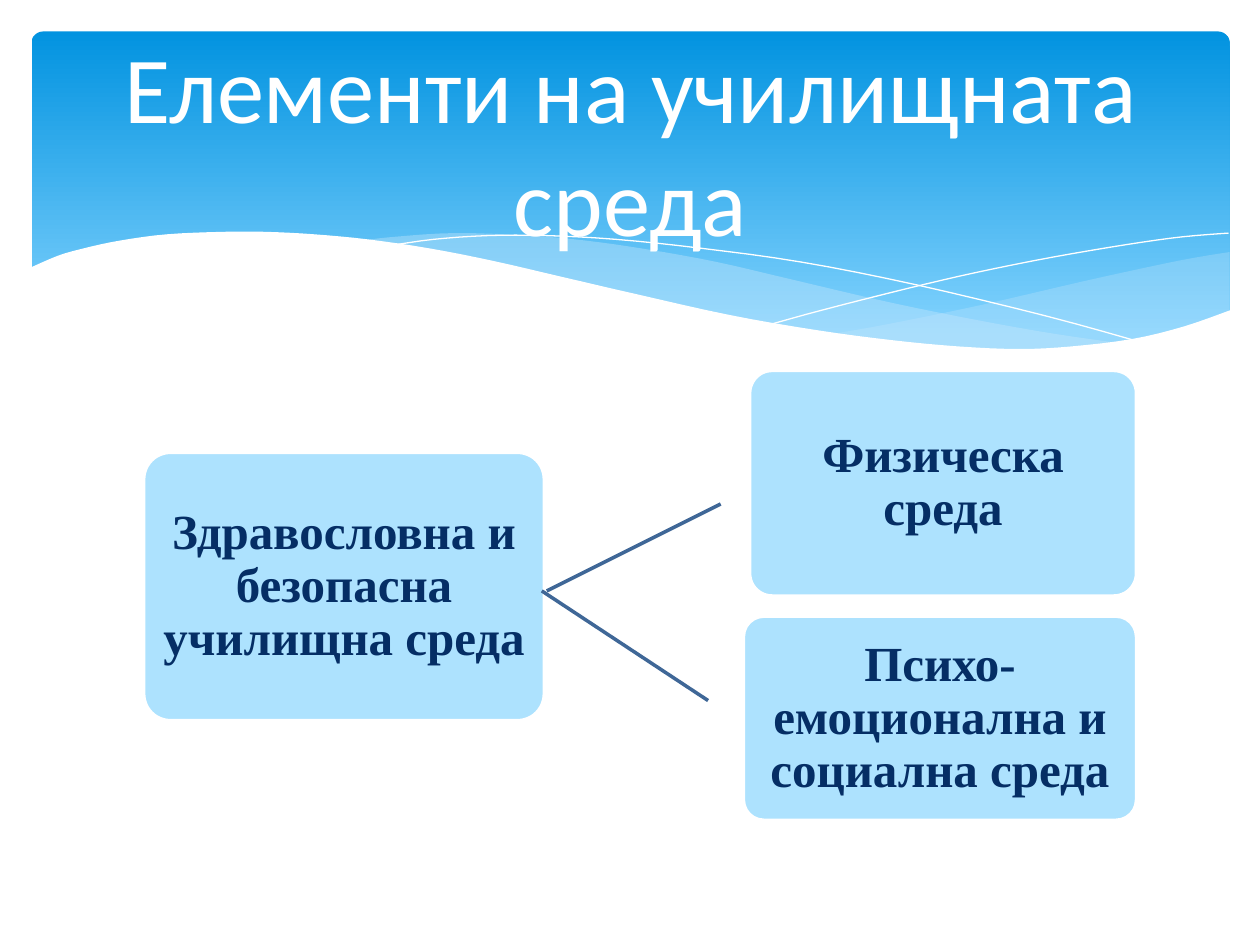
"""Build the slide on the elements of the school environment."""
import pptx
import pptx.dml.color
import pptx.enum.shapes
import pptx.enum.text
import pptx.oxml
import pptx.util
from pptx.util import Inches

RGBColor = pptx.dml.color.RGBColor
WHITE = RGBColor(0xFF, 0xFF, 0xFF)
SKY_TOP = RGBColor(0x02, 0x93, 0xE0)
SKY_BOTTOM = RGBColor(0x83, 0xD3, 0xFE)
MIST = RGBColor(0xC6, 0xE7, 0xFC)
BOX_BLUE = RGBColor(0xAD, 0xE2, 0xFE)
NAVY = RGBColor(0x05, 0x2E, 0x65)
LINK_BLUE = RGBColor(0x3F, 0x67, 0x97)

TITLE = "Елементи на училищната среда"
ELEMENTS = [
    ("Здравословна и безопасна училищна среда", (1.14, 3.59, 3.18, 2.13)),
    ("Физическа среда", (5.95, 2.94, 3.07, 1.79)),
    ("Психо-емоционална и социална среда", (5.9, 4.89, 3.12, 1.62)),
]
LINKS = [((4.34, 4.69), (5.72, 4)), ((4.3, 4.69), (5.62, 5.56))]

RIGHT_WAVE = [
    [(9.76, 2), (9.35, 2.07), (8.61, 2.23), (7.79, 2.42), (7.06, 2.57), (6.61, 2.65)],
    [(6.61, 2.65), (7.19, 2.72), (7.69, 2.77), (8.14, 2.78), (8.54, 2.76),
     (8.97, 2.7), (9.35, 2.62), (9.76, 2.47)],
]
MIDDLE_WAVE = [
    [(8.93, 2.73), (8.37, 2.65), (7.75, 2.54), (7.06, 2.4), (6.29, 2.22), (5.69, 2.08),
     (5.14, 1.98), (4.65, 1.91), (4.2, 1.87), (3.61, 1.85), (3.13, 1.88), (2.86, 1.91)],
    [(2.86, 1.91), (3.42, 1.99), (4.04, 2.11), (4.49, 2.22), (5.3, 2.4), (6.01, 2.55),
     (6.65, 2.66), (7.22, 2.74), (7.73, 2.77), (8.18, 2.78), (8.57, 2.77), (8.93, 2.73)],
]
FRONT_WAVE = [
    [(9.77, 2.46), (9.4, 2.59), (8.99, 2.69), (8.5, 2.75), (8.09, 2.77), (7.61, 2.75),
     (7.08, 2.7), (6.48, 2.62), (5.79, 2.5), (5.03, 2.33), (4.47, 2.2), (3.91, 2.07),
     (3.4, 1.97), (2.92, 1.9), (2.5, 1.86), (2.11, 1.84), (1.77, 1.84), (1.32, 1.86),
     (0.95, 1.91), (0.67, 1.97), (0.46, 2.03), (0.23, 2.13)],
    [(0.23, 3.29), (9.77, 3.29)],
]
FALLING_CREST = [(3.09, 1.95), (3.44, 1.9), (3.87, 1.87), (4.33, 1.87), (4.89, 1.9),
                 (5.56, 1.97), (6.36, 2.08), (7.27, 2.26), (8.31, 2.51), (9.07, 2.72)]
RISING_CREST = [(6.13, 2.57), (6.53, 2.46), (7.2, 2.29), (7.76, 2.16), (8.36, 2.04),
                (8.95, 1.94), (9.38, 1.88), (9.75, 1.85)]


def smooth(knots, steps=4):
    """Return Catmull-Rom points through the knots."""
    padded = [knots[0], *knots, knots[-1]]
    points = [knots[0]]
    for a, b, c, d in zip(padded, padded[1:], padded[2:], padded[3:]):
        for step in range(1, steps + 1):
            t = step / steps
            points.append(tuple(
                q + t / 2 * (r - p + t * (2 * p - 5 * q + 4 * r - s + t * (3 * (q - r) + s - p)))
                for p, q, r, s in zip(a, b, c, d)))
    return points


def add_outline(slide, curves, close):
    """Add a freeform running along the smoothed curves."""
    start, *rest = [(Inches(x), Inches(y)) for curve in curves for x, y in smooth(curve)]
    builder = slide.shapes.build_freeform(*start)
    builder.add_line_segments(rest, close=close)
    outline = builder.convert_to_shape()
    outline.shadow.inherit = False
    return outline


def add_wave(slide, curves, color, opacity=100):
    """Add a filled wave without an edge."""
    wave = add_outline(slide, curves, True)
    wave.fill.solid()
    wave.fill.fore_color.rgb = color
    wave.line.fill.background()
    if opacity < 100:
        color_xml = wave.fill._xPr.find(".//" + pptx.oxml.ns.qn("a:srgbClr"))
        alpha = pptx.oxml.parse_xml(f"<a:alpha {pptx.oxml.ns.nsdecls('a')} val='{opacity * 1000}'/>")
        color_xml.append(alpha)


def add_crest(slide, knots):
    """Add a thin white crest line."""
    crest = add_outline(slide, [knots], False)
    crest.fill.background()
    crest.line.color.rgb = WHITE
    crest.line.width = pptx.util.Pt(0)


def add_rounded(slide, place, rounding):
    """Add a rounded rectangle without a shadow."""
    kind = pptx.enum.shapes.MSO_SHAPE.ROUNDED_RECTANGLE
    rounded = slide.shapes.add_shape(kind, *map(Inches, place))
    rounded.adjustments[0] = rounding
    rounded.shadow.inherit = False
    return rounded


def write(holder, wording, size, font_name, color, bold=False):
    """Write centred text into the holder."""
    frame = holder.text_frame
    frame.text = wording
    frame.word_wrap = True
    frame.vertical_anchor = pptx.enum.text.MSO_ANCHOR.MIDDLE
    paragraph = frame.paragraphs[0]
    paragraph.alignment = pptx.enum.text.PP_ALIGN.CENTER
    font = paragraph.runs[0].font
    font.size, font.name, font.bold = pptx.util.Pt(size), font_name, bold
    font.color.rgb = color
    return frame


def add_banner(slide):
    """Add the gradient banner and its waves."""
    sky = add_rounded(slide, (0.25, 0.25, 9.51, 2.7), 0.034)
    sky.line.fill.background()
    sky.fill.gradient()
    sky.fill.gradient_angle = 270
    for stop, color, position in zip(sky.fill.gradient_stops, (SKY_TOP, SKY_BOTTOM), (0, 0.9)):
        stop.color.rgb = color
        stop.position = position
    add_wave(slide, RIGHT_WAVE, MIST, 29)
    add_wave(slide, MIDDLE_WAVE, MIST, 40)
    add_crest(slide, FALLING_CREST)
    add_crest(slide, RISING_CREST)
    add_wave(slide, FRONT_WAVE, WHITE)


def add_element(slide, wording, place):
    """Add one box of the diagram."""
    box = add_rounded(slide, place, 0.1)
    box.fill.solid()
    box.fill.fore_color.rgb = BOX_BLUE
    box.line.color.rgb = WHITE
    box.line.width = pptx.util.Pt(2)
    frame = write(box, wording, 28, "Times New Roman", NAVY, True)
    frame.margin_left = frame.margin_right = Inches(0.02)
    frame.margin_top = frame.margin_bottom = Inches(0.02)
    frame.paragraphs[0].line_spacing = 0.9


def add_link(slide, start, end):
    """Add a straight line between two boxes."""
    straight = pptx.enum.shapes.MSO_CONNECTOR.STRAIGHT
    link = slide.shapes.add_connector(straight, *map(Inches, start + end))
    link.line.color.rgb = LINK_BLUE
    link.line.width = pptx.util.Pt(2)
    link._element.spPr.append(
        pptx.oxml.parse_xml(f"<a:effectLst {pptx.oxml.ns.nsdecls('a')}/>"))


def main():
    """Assemble and save the slide."""
    deck = pptx.Presentation()
    deck.slide_width, deck.slide_height = Inches(10), Inches(7.5)
    slide = deck.slides.add_slide(deck.slide_layouts[6])
    add_banner(slide)
    title = slide.shapes.add_textbox(*map(Inches, (0.28, 0.52, 9.45, 1.22)))
    write(title, TITLE, 54, "Calibri", WHITE)
    for wording, place in ELEMENTS:
        add_element(slide, wording, place)
    for start, end in LINKS:
        add_link(slide, start, end)
    deck.save("out.pptx")


if __name__ == "__main__":
    main()
